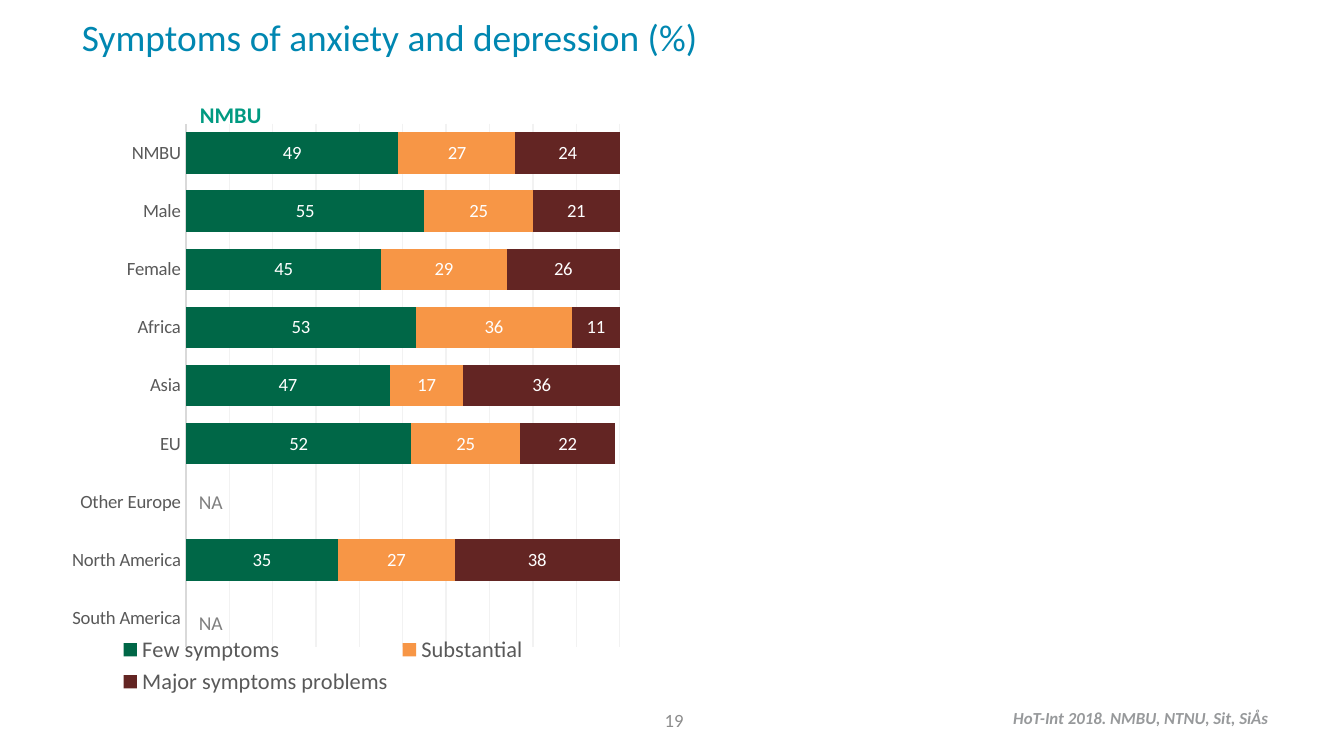
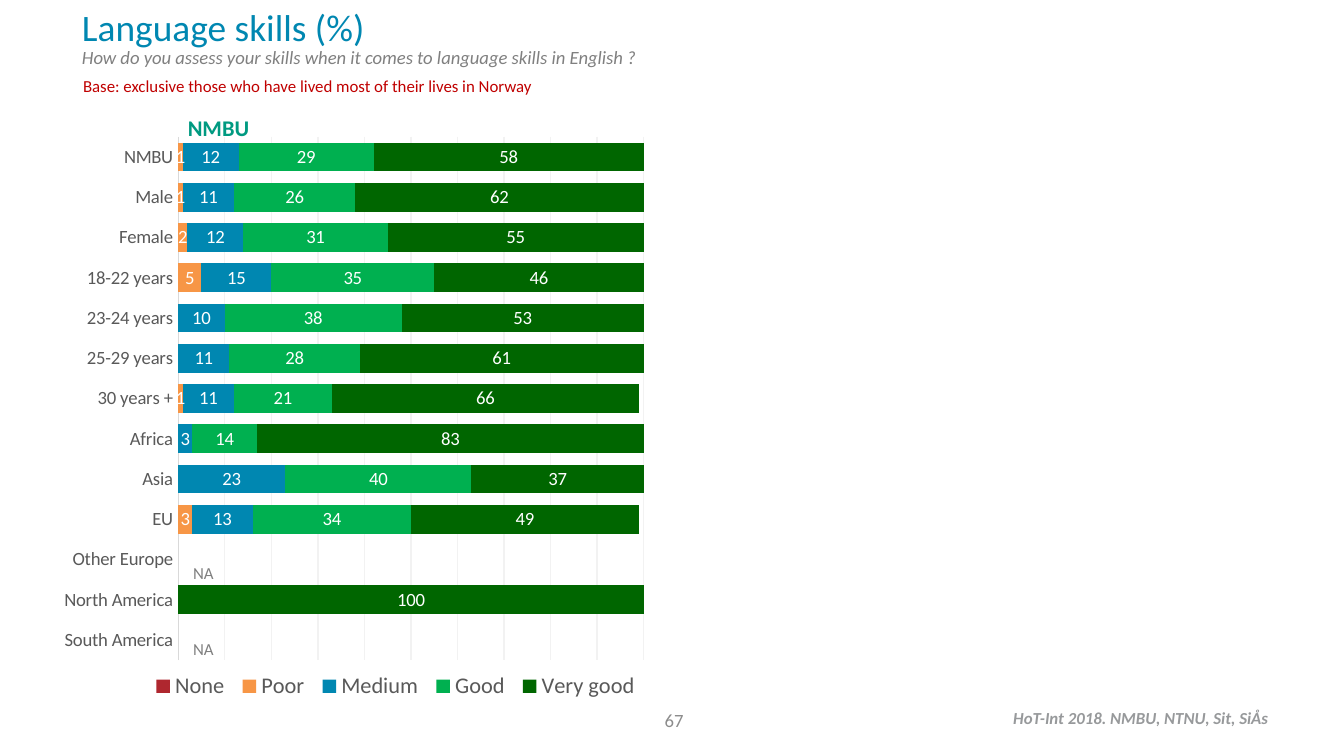
from dataclasses import dataclass

from lxml import etree
from pptx import Presentation, util as u
from pptx.chart.data import CategoryChartData
from pptx.dml.color import RGBColor
from pptx.enum import chart as charts, text
from pptx.oxml.ns import qn


@dataclass(frozen=True)
class Theme:
    font: str = "Calibri"
    blue: str = "0087B1"
    teal: str = "009A81"
    red: str = "C00000"
    gray: str = "808080"
    page_gray: str = "8C8C8C"
    footer_gray: str = "97999B"
    axis_text: str = "595959"
    axis_line: str = "D9D9D9"
    grid_line: str = "F2F2F2"
    white: str = "FFFFFF"
    title_size: float = 20
    heading_size: float = 12
    body_size: float = 10
    na_size: float = 10.5
    small_size: float = 9


theme = Theme()


def add_text(page, words, place, size, color, wrap=False, middle=False,
             align=None, bold=None, italic=None):
    """Add a one-paragraph text box; place is left, top, width, height in cm."""
    box = page.shapes.add_textbox(*map(u.Cm, place))
    frame = box.text_frame
    frame.word_wrap = wrap
    frame.auto_size = text.MSO_AUTO_SIZE.NONE if wrap else text.MSO_AUTO_SIZE.SHAPE_TO_FIT_TEXT
    frame.vertical_anchor = text.MSO_ANCHOR.MIDDLE if middle else text.MSO_ANCHOR.TOP
    para = frame.paragraphs[0]
    para.text = words
    para.alignment = align
    font = para.font
    font.name, font.size, font.bold, font.italic = theme.font, u.Pt(size), bold, italic
    font.color.rgb = RGBColor.from_string(color)


def add_bars(page, place, categories, series_list, plot_box, legend_box=None):
    """Add a stacked bar chart; plot_box and legend_box are fractions of the chart."""
    data = CategoryChartData(number_format="0")
    data.categories = categories
    for name, _, values in series_list:
        data.add_series(name, values)
    chart = page.shapes.add_chart(
        charts.XL_CHART_TYPE.BAR_STACKED, *map(u.Cm, place), data).chart
    chart.has_title = False
    chart.font.name, chart.font.size = theme.font, u.Pt(theme.body_size)

    plot = chart.plots[0]
    plot.gap_width, plot.overlap, plot.vary_by_categories = 40, 100, False
    for series, (_, color, _) in zip(plot.series, series_list):
        series.format.fill.solid()
        series.format.fill.fore_color.rgb = RGBColor.from_string(color)
        labels = series.data_labels
        labels.show_value = True
        labels.number_format, labels.number_format_is_linked = "0", False
        labels.font.name, labels.font.size = theme.font, u.Pt(theme.body_size)
        labels.font.color.rgb = RGBColor.from_string(theme.white)

    rows, scale = chart.category_axis, chart.value_axis
    rows.reverse_order = True
    rows.major_tick_mark = rows.minor_tick_mark = charts.XL_TICK_MARK.NONE
    scale.minimum_scale, scale.maximum_scale, scale.major_unit = 0, 100, 10
    scale.has_major_gridlines = True
    scale.visible = False
    for line, color in ((rows.format.line, theme.axis_line),
                        (scale.major_gridlines.format.line, theme.grid_line)):
        line.width = u.Pt(0.75)
        line.color.rgb = RGBColor.from_string(color)

    chart.has_legend = True
    legend = chart.legend
    legend.position = charts.XL_LEGEND_POSITION.BOTTOM
    legend.include_in_layout = False
    for font, size in ((rows.tick_labels.font, theme.body_size),
                       (legend.font, theme.heading_size)):
        font.name, font.size = theme.font, u.Pt(size)
        font.color.rgb = RGBColor.from_string(theme.axis_text)

    plot_area = chart._chartSpace.chart.plotArea
    for parent, index, fractions in ((plot_area, 0, plot_box), (legend._element, 1, legend_box)):
        if fractions is None:
            continue
        for old in parent.findall(qn("c:layout")):
            parent.remove(old)
        layout = etree.Element(qn("c:layout"))
        manual = etree.SubElement(layout, qn("c:manualLayout"))
        settings = [("xMode", "edge"), ("yMode", "edge"), *zip("xywh", fractions)]
        if parent is plot_area:
            settings.insert(0, ("layoutTarget", "inner"))
        for tag, value in settings:
            etree.SubElement(manual, qn(f"c:{tag}")).set("val", str(value))
        parent.insert(index, layout)


deck = Presentation()
deck.slide_width, deck.slide_height = u.Cm(25.4), u.Cm(14.29)
pages = []
for number in ("19", "67"):
    page = deck.slides.add_slide(deck.slide_layouts[6])
    add_text(page, "HoT-Int 2018. NMBU, NTNU, Sit, SiÅs", (18.9, 13.26, 5.41, 0.64),
             theme.small_size, theme.footer_gray, bold=True, italic=True)
    add_text(page, number, (9.78, 13.23, 5.92, 0.76), theme.body_size, theme.page_gray,
             wrap=True, middle=True, align=text.PP_ALIGN.CENTER)
    pages.append(page)
symptoms_page, language_page = pages

groups = ["NMBU", "Male", "Female"]
ages = ["18-22 years", "23-24 years", "25-29 years", "30 years +"]
regions = ["Africa", "Asia", "EU", "Other Europe", "North America", "South America"]

# Symptoms of anxiety and depression
add_bars(symptoms_page, (0.3, 2.29, 11.61, 10.95), groups + regions, [
    ("Few symptoms", "006747", [49, 55, 45, 53, 47, 52, None, 35, None]),
    ("Substantial", "F79646", [27, 25, 29, 36, 17, 25, None, 27, None]),
    ("Major symptoms problems", "632523", [24, 21, 26, 11, 36, 22, None, 38, None]),
], plot_box=(0.277, 0.005, 0.706, 0.903))
add_text(symptoms_page, "Symptoms of anxiety and depression (%)", (1.3, 0, 23.6, 1.4),
         theme.title_size, theme.blue, wrap=True, middle=True)

# Language skills
add_bars(language_page, (0.51, 2.57, 11.81, 10.95), groups + ages + regions, [
    ("None", "AF272F", [None] * 13),
    ("Poor", "F79646", [1, 1, 2, 5, None, None, 1, None, None, 3, None, None, None]),
    ("Medium", "0087B1", [12, 11, 12, 15, 10, 11, 11, 3, 23, 13, None, None, None]),
    ("Good", "00B050", [29, 26, 31, 35, 38, 28, 21, 14, 40, 34, None, None, None]),
    ("Very good", "006600", [58, 62, 55, 46, 53, 61, 66, 83, 37, 49, None, 100, None]),
], plot_box=(0.242, 0.002, 0.745, 0.903), legend_box=(0.19, 0.91, 0.8, 0.08))
add_text(language_page, "Language skills (%)", (1.3, -0.05, 10, 1.4),
         theme.title_size, theme.blue, wrap=True)
add_text(language_page,
         "How do you assess your skills when it comes to language skills in English ?",
         (1.3, 0.74, 15.14, 0.69), theme.body_size, theme.gray, wrap=True, italic=True)
add_text(language_page, "Base: exclusive those who have lived most of their lives in Norway",
         (1.32, 1.3, 9.12, 0.64), theme.small_size, theme.red)

# Chart headings and marks for rows without data
for page, left, top in ((symptoms_page, 3.53, 1.78), (language_page, 3.3, 2.03)):
    add_text(page, "NMBU", (left, top, 1.68, 0.76), theme.heading_size, theme.teal, bold=True)
for page, left, tops, width, height, size in (
        (symptoms_page, 3.51, (9.14, 11.43), 0.99, 0.74, theme.na_size),
        (language_page, 3.4, (10.52, 11.94), 0.91, 0.64, theme.small_size)):
    for top in tops:
        add_text(page, "NA", (left, top, width, height), size, theme.gray)

deck.save("out.pptx")
